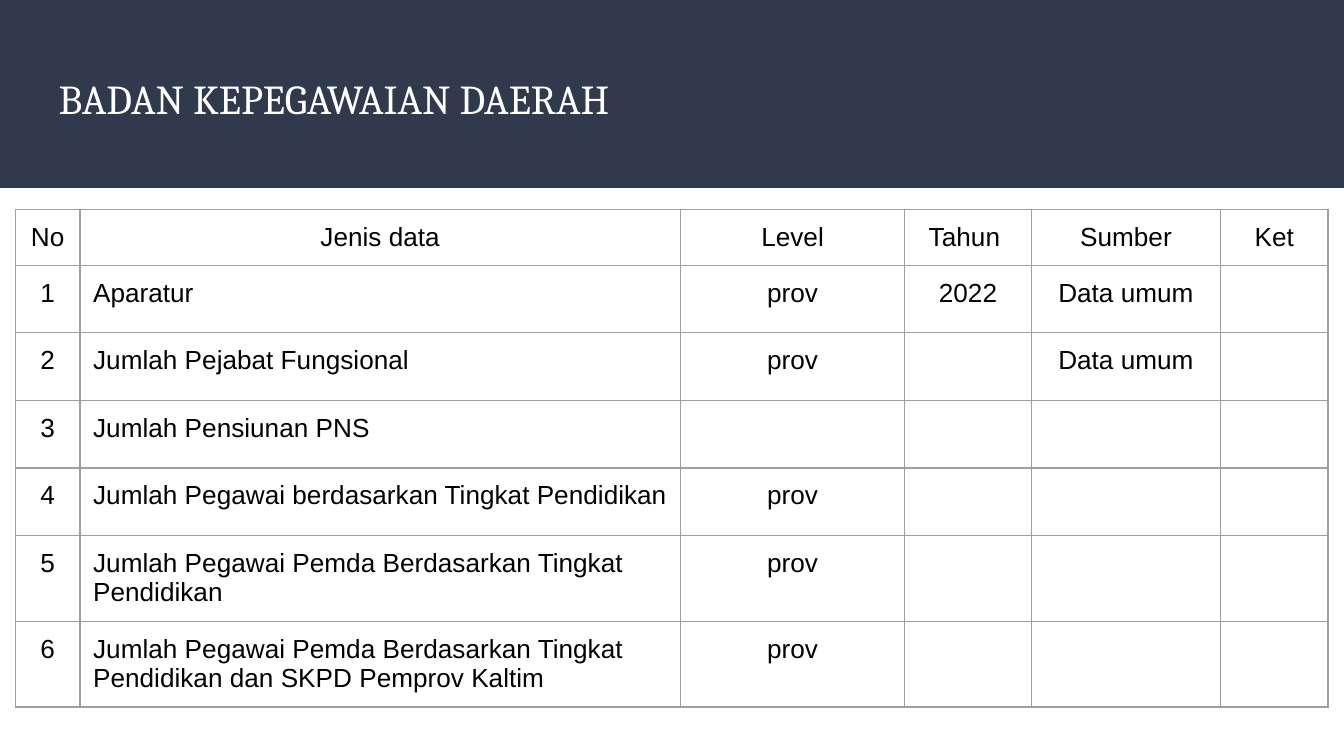
from lxml.etree import SubElement as Sub
from pptx import Presentation
from pptx.dml.color import RGBColor
from pptx.enum.shapes import MSO_SHAPE as Kind
from pptx.enum.text import MSO_ANCHOR as Anchor, PP_ALIGN as Align
from pptx.oxml import parse_xml
from pptx.oxml.ns import nsdecls, qn
from pptx.util import Cm, Pt

WIDE, HIGH = 25.4, 14.28
PAD = 0.25
COLS = [1.22, 11.35, 4.24, 2.39, 3.58, 2.03]
ROWS = [1.06] + [1.22] * 4 + [1.62] * 2
HEAD = ["No", "Jenis data", "Level", "Tahun ", "Sumber", "Ket"]
DATA = [
    ["Aparatur", "prov", "2022", "Data umum", ""],
    ["Jumlah Pejabat Fungsional", "prov", "", "Data umum", ""],
    ["Jumlah Pensiunan PNS", "", "", "", ""],
    ["Jumlah Pegawai berdasarkan Tingkat Pendidikan", "prov", "", "", ""],
    ["Jumlah Pegawai Pemda Berdasarkan Tingkat Pendidikan", "prov", "", "", ""],
    ["Jumlah Pegawai Pemda Berdasarkan Tingkat Pendidikan dan SKPD Pemprov Kaltim",
     "prov", "", "", ""],
]
TITLE = {"name": "Cambria", "size": Pt(22), "bold": False}
BODY = {"name": "Arial", "size": Pt(14), "bold": False}
INSET = {f"margin_{side}": Cm(PAD) for side in ("left", "right", "top", "bottom")}


def tint(code):
    return RGBColor.from_string(code)


def assign(item, values):
    for key, value in values.items():
        setattr(item, key, value)


def write(para, text, look, color, align):
    para.alignment = align
    run = para.add_run()
    run.text = text
    assign(run.font, look)
    run.font.color.rgb = tint(color)


def edge(cell, color, width):
    props = cell._tc.get_or_add_tcPr()
    for spot, side in enumerate(("lnL", "lnR", "lnT", "lnB")):
        line = parse_xml(f'<a:{side} {nsdecls("a")} w="{Pt(width)}"/>')
        fill = Sub(line, qn("a:solidFill"))
        Sub(fill, qn("a:srgbClr"), val=color)
        props.insert(spot, line)


def header(slide, box, text):
    left, top, width, height = box
    band = slide.shapes.add_shape(Kind.RECTANGLE, *map(Cm, box))
    band.shadow.inherit = False
    band.fill.solid()
    band.fill.fore_color.rgb = tint("31394D")
    band.line.fill.background()
    title = slide.shapes.title
    title._element.addprevious(band._element)
    assign(title, {"left": Cm(left + 0.86), "top": Cm(top + 0.99),
                   "width": Cm(width - 1.72), "height": Cm(1.73)})
    frame = title.text_frame
    assign(frame, INSET | {"word_wrap": True, "vertical_anchor": Anchor.MIDDLE})
    write(frame.paragraphs[0], text, TITLE, "FFFFFF", Align.LEFT)


def grid(slide, box, rows):
    table = slide.shapes.add_table(len(rows), len(COLS), *map(Cm, box)).table
    assign(table, {"first_row": False, "horz_banding": False})
    for col, width in zip(table.columns, COLS):
        col.width = Cm(width)
    for row, height in zip(table.rows, ROWS):
        row.height = Cm(height)
    for r, texts in enumerate(rows):
        for c, text in enumerate(texts):
            cell = table.cell(r, c)
            assign(cell, INSET | {"vertical_anchor": Anchor.TOP})
            cell.fill.background()
            edge(cell, "9E9E9E", 0.75)
            if text:
                align = Align.LEFT if r and c == 1 else Align.CENTER
                write(cell.text_frame.paragraphs[0], text, BODY, "000000", align)


def main():
    deck = Presentation()
    assign(deck, {"slide_width": Cm(WIDE), "slide_height": Cm(HIGH)})
    slide = deck.slides.add_slide(deck.slide_layouts[5])
    header(slide, (0, 0, WIDE, 3.55), "BADAN KEPEGAWAIAN DAERAH")
    rows = [HEAD] + [[str(n), *row] for n, row in enumerate(DATA, 1)]
    grid(slide, (0.29, 3.95, sum(COLS), sum(ROWS)), rows)
    deck.save("out.pptx")


if __name__ == "__main__":
    main()
